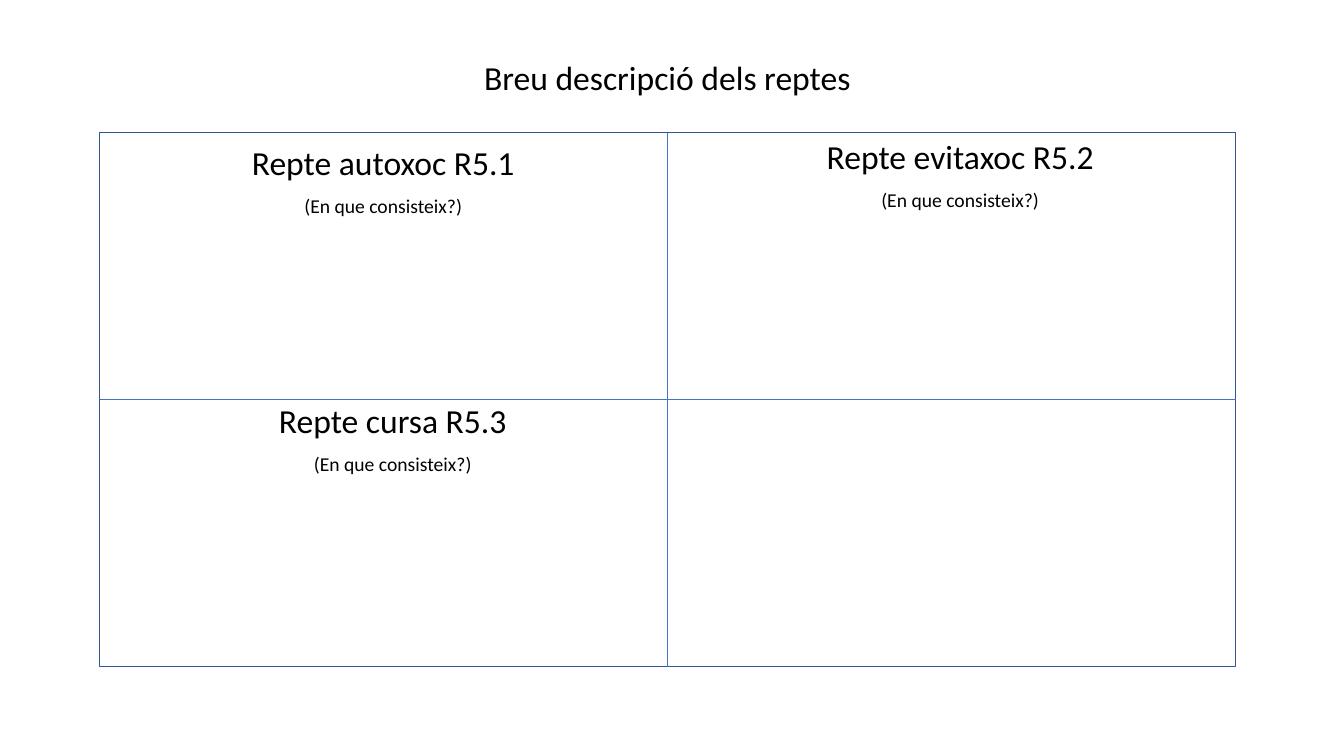
"""Build a slide with a two-by-two board that describes the challenges."""
from pptx import Presentation
from pptx import util as u
from pptx.dml.color import RGBColor
from pptx.enum import shapes, text
from pptx.oxml.ns import qn
from lxml import etree


def color(value):
    return RGBColor.from_string(value)


def write(shape, lines):
    frame = shape.text_frame
    frame.word_wrap = True
    frame.auto_size = text.MSO_AUTO_SIZE.NONE
    frame.vertical_anchor = text.MSO_ANCHOR.TOP
    frame.margin_left = frame.margin_right = u.Cm(0.25)
    frame.margin_top = frame.margin_bottom = u.Cm(0.13)
    for index, (words, size) in enumerate(lines):
        paragraph = frame.add_paragraph() if index else frame.paragraphs[0]
        paragraph.alignment = text.PP_ALIGN.CENTER
        paragraph.line_spacing = 0.9
        paragraph.space_before = u.Pt(10)
        run = paragraph.add_run()
        run.text = words
        run.font.size = u.Pt(size)
        run.font.name = "Calibri"
        run.font.color.rgb = color("000000")


presentation = Presentation()
presentation.slide_width = u.Cm(33.87)
presentation.slide_height = u.Cm(19.05)
slide = presentation.slides.add_slide(presentation.slide_layouts[5])

left, top, width, height = 2.51, 3.34, 28.63, 13.46
box_width, box_height = 14.3, 4.6

board = slide.shapes.add_shape(
    shapes.MSO_SHAPE.RECTANGLE, u.Cm(left), u.Cm(top), u.Cm(width), u.Cm(height))
board.shadow.inherit = False
board.fill.solid()
board.fill.fore_color.rgb = color("FFFFFF")
board.line.color.rgb = color("325491")
board.line.width = u.Pt(1)

for start_side, end_side in [(0, 2), (1, 3)]:
    divider = slide.shapes.add_connector(
        shapes.MSO_CONNECTOR.STRAIGHT, u.Cm(0), u.Cm(0), u.Cm(1), u.Cm(1))
    divider.begin_connect(board, start_side)
    divider.end_connect(board, end_side)
    divider.line.color.rgb = color("4472C4")
    divider.line.width = u.Pt(0.5)
    etree.SubElement(divider._element.spPr, qn("a:effectLst"))

challenges = [
    ("Repte autoxoc R5.1", 2.51, 3.55),
    ("Repte evitaxoc R5.2", 17.05, 3.4),
    ("Repte cursa R5.3", 2.75, 10.07),
]
for name, box_left, box_top in challenges:
    box = slide.shapes.add_textbox(
        u.Cm(box_left), u.Cm(box_top), u.Cm(box_width), u.Cm(box_height))
    write(box, [(name, 24), ("(En que consisteix?)", 14)])

title = slide.shapes.title
title.left, title.top = u.Cm(9.67), u.Cm(1.42)
title.width, title.height = u.Cm(box_width), u.Cm(box_height)
write(title, [("Breu descripció dels reptes", 24)])

presentation.save("out.pptx")
